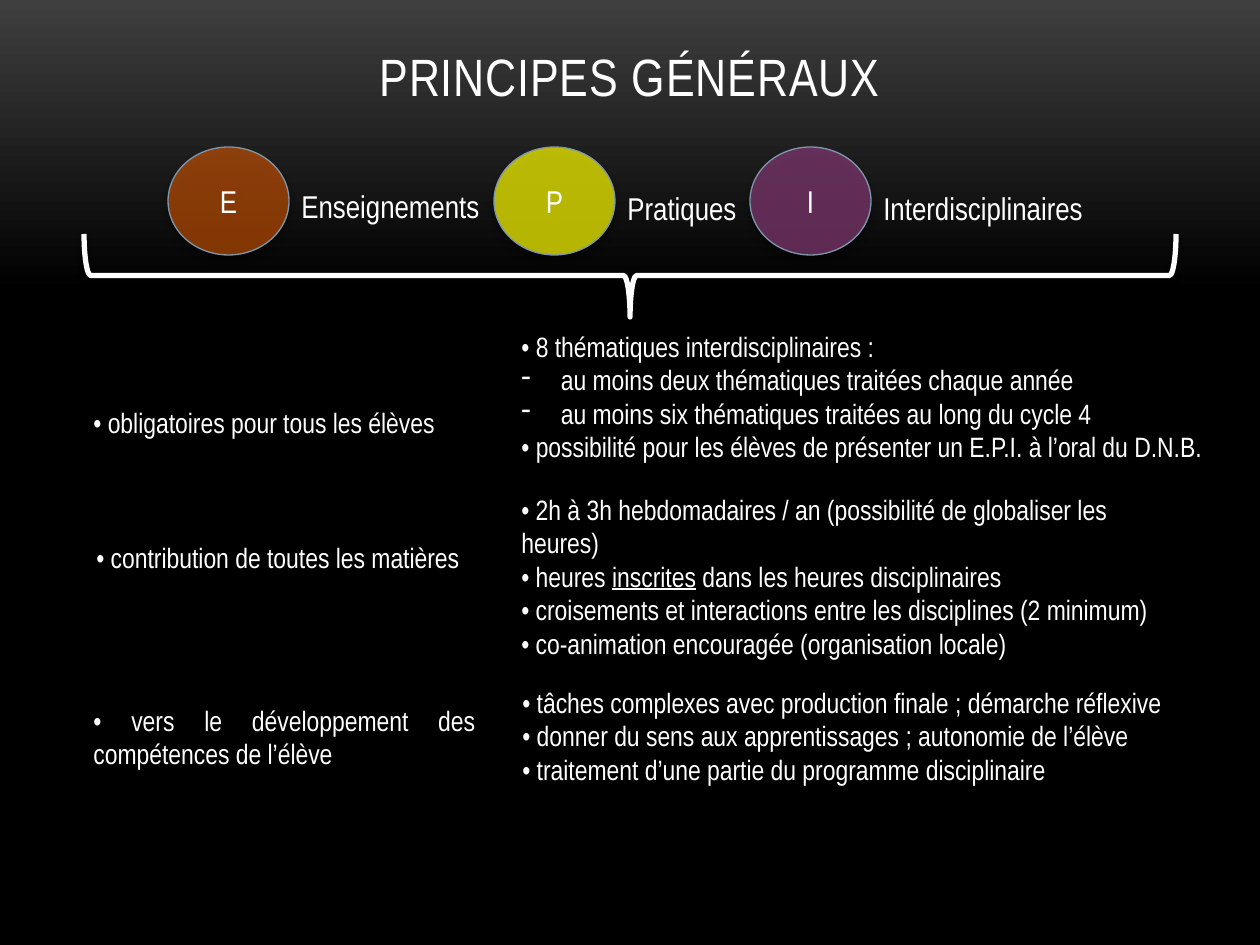
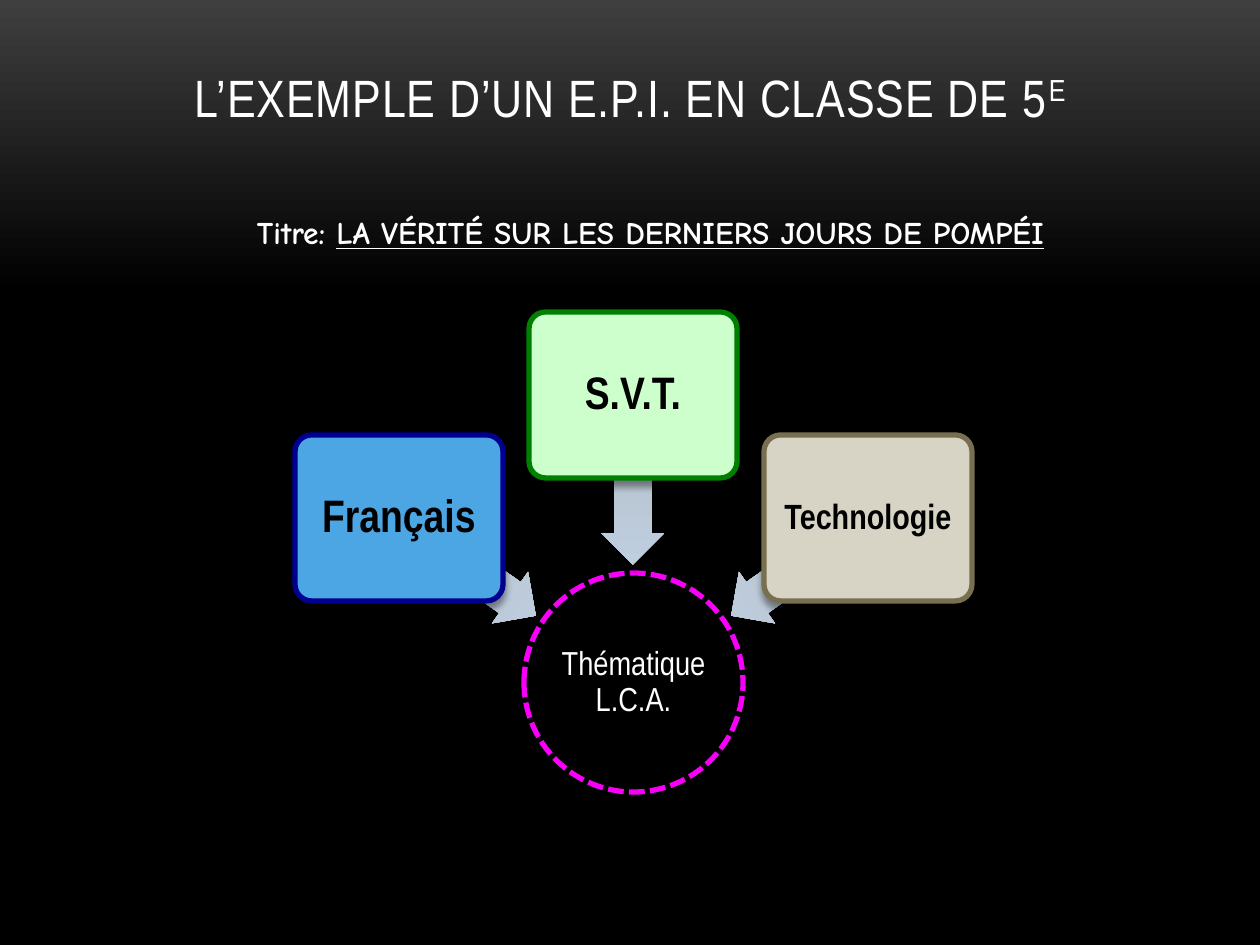
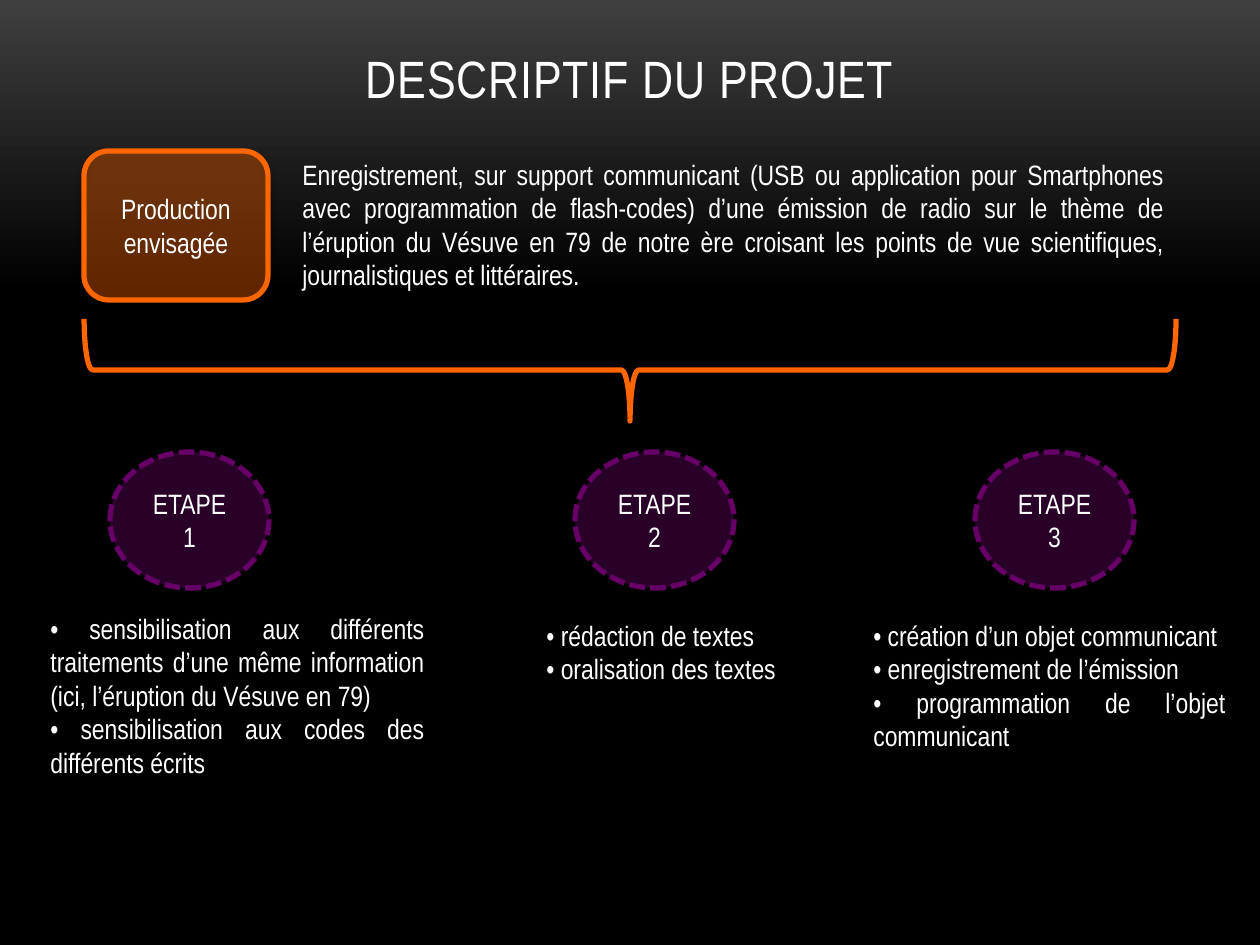
import pptx
import pptx.util
import pptx.dml.color
import pptx.enum.dml
import pptx.enum.shapes
import pptx.enum.text
import pptx.oxml
import pptx.oxml.ns
import lxml.etree

theme = {
    "font": "Arial Narrow", "title_font": "Comic Neue",
    "white": "FFFFFF", "black": "000000", "grey": "3F3F3F", "outline": "7E97AD",
    "orange": "FF6600", "yellow": "FFFF00", "plum": "803971", "violet": "660066", "pink": "F600F7",
    "blue": "4CA6E4", "navy": "000090", "mint": "CCFFCC", "green": "008000",
    "sand": "D8D4C5", "brown": "786F51", "arrow": "B3BBC4", "arrow_tip": "BFCFE0",
    "title": 30, "label": 18, "body": 16, "subject": 26, "small_subject": 20, "theme_size": 19,
}
PX = 914400 / 126
Shape = pptx.enum.shapes.MSO_SHAPE
Align = pptx.enum.text.PP_ALIGN
AutoSize = pptx.enum.text.MSO_AUTO_SIZE
LEFT, CENTER, JUSTIFY = Align.LEFT, Align.CENTER, Align.JUSTIFY
rgb = pptx.dml.color.RGBColor.from_string
qn = pptx.oxml.ns.qn


def write(frame, lines, size=theme["body"], align=LEFT, color=theme["white"],
          font=theme["font"], spacing=None, run_xml=None, **frame_format):
    """Fill a frame; a line is a string or a list of (text, font format) runs."""
    for name, value in {"word_wrap": True, **frame_format}.items():
        setattr(frame, name, value)
    for index, line in enumerate(lines):
        paragraph = frame.paragraphs[0] if index == 0 else frame.add_paragraph()
        if isinstance(line, str) and line.startswith("- "):
            line = line[2:]
            properties = paragraph._p.get_or_add_pPr()
            properties.set("marL", "285750")
            properties.set("indent", "-285750")
            lxml.etree.SubElement(properties, qn("a:buFontTx"))
            lxml.etree.SubElement(properties, qn("a:buChar")).set("char", "-")
        paragraph.alignment = align
        paragraph.line_spacing = spacing
        for text, font_format in [(line, {})] if isinstance(line, str) else line:
            run = paragraph.add_run()
            run.text = text
            run.font.color.rgb = rgb(color)
            baseline = font_format.get("baseline")
            values = {"name": font, "size": pptx.util.Pt(size), **font_format}
            values.pop("baseline", None)
            for name, value in values.items():
                setattr(run.font, name, value)
            for name, value in (run_xml or {}).items():
                run.font._element.set(name, value)
            if baseline:
                run.font._element.set("baseline", baseline)


def draw(slide, kind, box, fill=None, alpha=100, line=None, width=3, dashed=False,
         rotation=0, adjustments=(), blur=4, distance=3.4):
    shape = slide.shapes.add_shape(kind, *[round(length * PX) for length in box])
    shape.rotation = rotation
    for index, value in enumerate(adjustments):
        shape.adjustments[index] = value
    # Fill and outline
    if fill:
        shape.fill.solid()
        shape.fill.fore_color.rgb = rgb(fill)
        color = shape._element.spPr.find(qn("a:solidFill"))[0]
        if alpha < 100:
            lxml.etree.SubElement(color, qn("a:alpha")).set("val", str(alpha * 1000))
    else:
        shape.fill.background()
    if line:
        shape.line.color.rgb = rgb(line)
        shape.line.width = pptx.util.Pt(width)
        if dashed:
            shape.line.dash_style = pptx.enum.dml.MSO_LINE.SQUARE_DOT
    else:
        shape.line.fill.background()
    # Soft shadow below the shape
    shape.shadow.inherit = False
    effects = shape._element.spPr.find(qn("a:effectLst"))
    shadow = lxml.etree.SubElement(effects, qn("a:outerShdw"), blurRad=str(blur * 12700),
                                   dist=str(round(distance * 12700)), dir="5400000", rotWithShape="0")
    color = lxml.etree.SubElement(shadow, qn("a:srgbClr"), val=theme["black"])
    lxml.etree.SubElement(color, qn("a:alpha"), val="40000")
    return shape


presentation = pptx.Presentation()
presentation.slide_width = pptx.util.Inches(10)
presentation.slide_height = pptx.util.Inches(7.5)

# Shared background: grey fading to black in the top third
background = presentation.slide_master.background.fill
background.gradient()
background.gradient_angle = 270
for stop, color, position in zip(background.gradient_stops, ("grey", "black"), (0, 0.31)):
    stop.color.rgb = rgb(theme[color])
    stop.position = position

# Slides and titles: runs, top, height, bottom inset
slides = []
for runs, top, height, inset in [
    ([("PRINCIPES GÉNÉRAUX", {})], 5, 108, 6),
    ([("L’EXEMPLE D’UN E.P.I. EN CLASSE DE 5", {}), ("E", {"baseline": "30000"})], 38, 158, 68),
    ([("DESCRIPTIF DU PROJET", {})], 10, 105, 6),
]:
    slide = presentation.slides.add_slide(presentation.slide_layouts[5])
    title = slide.shapes.title
    for name, value in {"left": 84, "top": top, "width": 1092, "height": height}.items():
        setattr(title, name, round(value * PX))
    write(title.text_frame, [runs], theme["title"], CENTER, run_xml={"spc": "50"},
          auto_size=AutoSize.NONE, vertical_anchor=pptx.enum.text.MSO_ANCHOR.BOTTOM,
          margin_bottom=round(inset * PX))
    slides.append(slide)
principles, example, project = slides

# Braces: slide, top, height, colour, adjustments
for slide, top, height, color, adjustments in [
    (principles, 234, 83, "white", (0.08, 0.5)),
    (project, 319, 102, "orange", ()),
]:
    length = 1092
    box = (630 - height / 2, top + height / 2 - length / 2, height, length)
    draw(slide, Shape.RIGHT_BRACE, box, line=theme[color], rotation=90,
         adjustments=adjustments, blur=3, distance=2)

# Principles: the three letters and their words
text_boxes = []
for letter, word, left, label_top, label_width, color, alpha in [
    ("E", "Enseignements", 168, 181, 205, "orange", 50),
    ("P", "Pratiques", 494, 183, 136, "yellow", 70),
    ("I", "Interdisciplinaires", 750, 183, 227, "plum", 73),
]:
    circle = draw(principles, Shape.OVAL, (left, 147, 121, 108), theme[color], alpha,
                  theme["outline"], 0.75)
    write(circle.text_frame, [letter], theme["label"], CENTER)
    text_boxes.append((principles, (left + 121, label_top, label_width, 50), [word],
                       {"size": theme["label"], "word_wrap": False}))

# Principles: left and right columns
text_boxes += [
    (principles, (81, 399, 372, 47), ["• obligatoires pour tous les élèves"], {"word_wrap": False}),
    (principles, (509, 323, 714, 149), [
        "• 8 thématiques interdisciplinaires :",
        "- au moins deux thématiques traitées chaque année",
        "- au moins six thématiques traitées au long du cycle 4",
        "• possibilité pour les élèves de présenter un E.P.I. à l’oral du D.N.B.",
    ], {"word_wrap": False}),
    (principles, (84, 534, 410, 47), ["• contribution de toutes les matières"], {"align": JUSTIFY}),
    (principles, (509, 486, 667, 183), [
        "• 2h à 3h hebdomadaires / an (possibilité de globaliser les heures)",
        [("• heures ", {}), ("inscrites", {"underline": True}), (" dans les heures disciplinaires", {})],
        "• croisements et interactions entre les disciplines (2 minimum)",
        "• co-animation encouragée (organisation locale)",
    ], {}),
    (principles, (81, 697, 407, 81), ["• vers le développement des compétences de l’élève"],
     {"align": JUSTIFY}),
    (principles, (510, 679, 667, 115), [
        "• tâches complexes avec production finale ; démarche réflexive",
        "• donner du sens aux apprentissages ; autonomie de l’élève",
        "• traitement d’une partie du programme disciplinaire",
    ], {}),
]

# Example: project title, theme circle, subjects pointing at it
text_boxes.append((example, (125, 207, 1051, 50), [[
    ("Titre: ", {"bold": True}),
    ("LA VÉRITÉ SUR LES DERNIERS JOURS DE POMPÉI", {"bold": True, "underline": True}),
]], {"size": theme["label"], "align": CENTER, "font": theme["title_font"]}))
circle = draw(example, Shape.OVAL, (524, 573, 219, 219), line=theme["pink"], dashed=True)
margins = ("margin_left", "margin_top", "margin_right", "margin_bottom")
write(circle.text_frame, ["Thématique L.C.A."], theme["theme_size"], CENTER, spacing=0.9,
      **dict.fromkeys(margins, round(PX)))
for subject, card_at, arrow_at, rotation, fill, line, size in [
    ("Français", (295, 435), (383, 536), 215, "blue", "navy", "subject"),
    ("S.V.T.", (529, 312), (549, 449), 270, "mint", "green", "subject"),
    ("Technologie", (764, 435), (716, 536), 325, "sand", "brown", "small_subject"),
]:
    arrow = draw(example, Shape.LEFT_ARROW, (*arrow_at, 168, 63), rotation=rotation,
                 adjustments=(0.6, 0.5))
    arrow.fill.gradient()
    arrow.fill.gradient_angle = 180
    for stop, color in zip(arrow.fill.gradient_stops, ("arrow", "arrow_tip")):
        stop.color.rgb = rgb(theme[color])
    card = draw(example, Shape.ROUNDED_RECTANGLE, (*card_at, 208, 166), theme[fill],
                line=theme[line], adjustments=(0.1,))
    write(card.text_frame, [[(subject, {"bold": True})]], theme[size], CENTER, theme["black"],
          spacing=0.9, **dict.fromkeys(margins, round(6 * PX)))

# Project: planned production
production = draw(project, Shape.ROUNDED_RECTANGLE, (84, 151, 184, 149), theme["orange"], 38,
                  theme["orange"])
write(production.text_frame, ["Production envisagée"], align=CENTER)
text_boxes.append((project, (290, 151, 887, 149), [
    "Enregistrement, sur support communicant (USB ou application pour Smartphones avec "
    "programmation de flash-codes) d’une émission de radio sur le thème de l’éruption du Vésuve "
    "en 79 de notre ère croisant les points de vue scientifiques, journalistiques et littéraires."
], {"align": JUSTIFY}))

# Project: three steps, each with its list
for number, (left, list_box, lines) in enumerate([
    (110, (38, 605, 399, 251), [
        "• sensibilisation aux différents traitements d’une même information "
        "(ici, l’éruption du Vésuve en 79)",
        "• sensibilisation aux codes des différents écrits",
    ]),
    (575, (534, 612, 336, 81), ["• rédaction de textes", "• oralisation des textes"]),
    (975, (861, 612, 377, 149), [
        "• création d’un objet communicant",
        "• enregistrement de l’émission",
        "• programmation de l’objet communicant",
    ]),
], start=1):
    step = draw(project, Shape.OVAL, (left, 452, 159, 136), theme["violet"], 40,
                theme["violet"], dashed=True)
    write(step.text_frame, [f"ETAPE {number}"], align=CENTER)
    text_boxes.append((project, list_box, lines, {"align": JUSTIFY}))

# All text boxes
for slide, box, lines, text_format in text_boxes:
    text_box = slide.shapes.add_textbox(*[round(length * PX) for length in box])
    write(text_box.text_frame, lines, auto_size=AutoSize.SHAPE_TO_FIT_TEXT, **text_format)

presentation.save("out.pptx")
